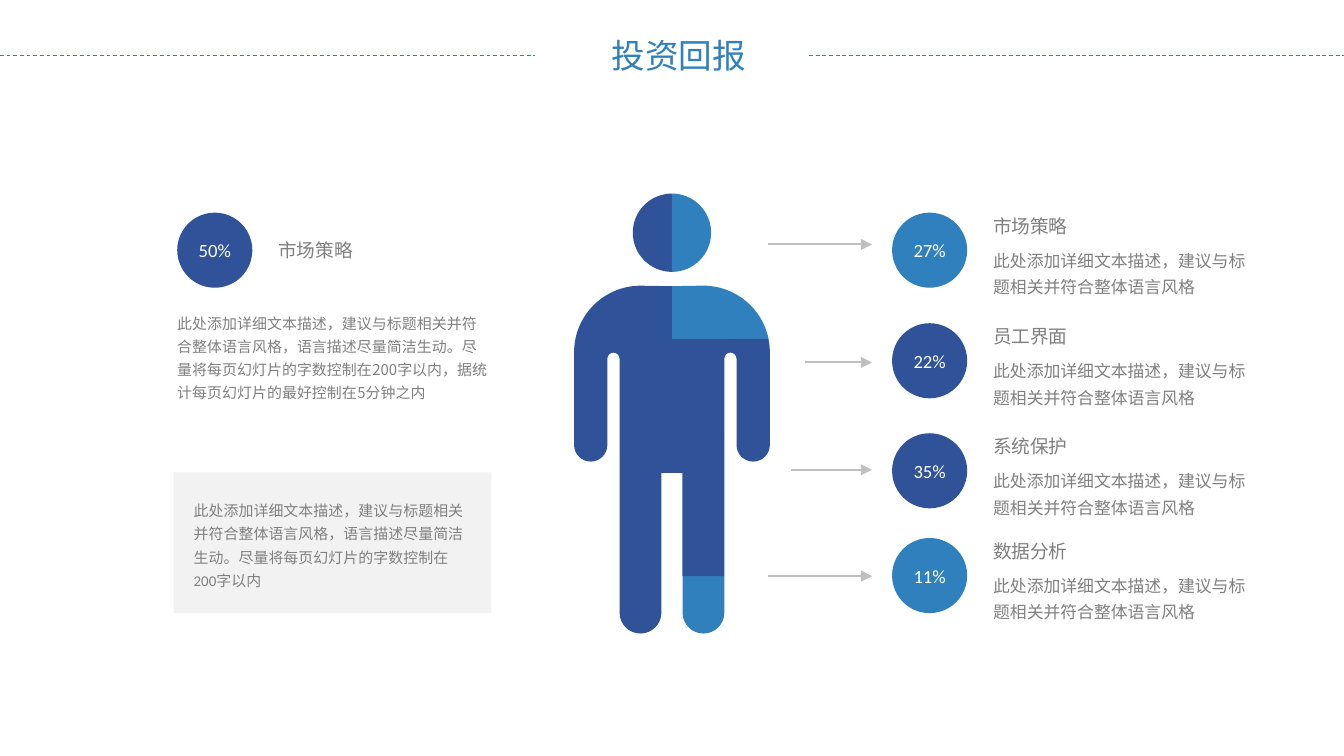
import math
from lxml import etree
from pptx import Presentation
from pptx import util as u
from pptx.dml.color import RGBColor
from pptx.enum import dml, lang, shapes, text
from pptx.oxml.ns import qn

HUES = {"navy": "305299", "blue": "3080BD", "gray": "808080",
        "pale": "F2F2F2", "arrow": "BFBFBF", "white": "FFFFFF"}
LATIN, HAN = "Calibri", "Noto Sans CJK SC"
NOTE = "此处添加详细文本描述，建议与标题相关并符合整体语言风格"
LONG = NOTE + "，语言描述尽量简洁生动。尽量将每页幻灯片的字数控制在200字以内"
DISC = 1.42
ROWS = [
    (4.02, "27%", "市场策略", "blue", 14.52, 4.62),
    (6.11, "22%", "员工界面", "navy", 15.21, 6.85),
    (8.19, "35%", "系统保护", "navy", 14.95, 8.88),
    (10.17, "11%", "数据分析", "blue", 14.52, 10.89),
]


def color(hue):
    return RGBColor.from_string(HUES[hue])


def paint(shape, hue):
    shape.shadow.inherit = False
    shape.fill.solid()
    shape.fill.fore_color.rgb = color(hue)
    shape.line.fill.background()


def write(shape, words, size, font, hue="gray", inset=(0, 0), space=None,
          align=text.PP_ALIGN.LEFT, anchor=text.MSO_ANCHOR.MIDDLE, wrap=True):
    frame = shape.text_frame
    frame.text = words
    frame.word_wrap = wrap
    frame.auto_size = text.MSO_AUTO_SIZE.NONE
    frame.vertical_anchor = anchor
    frame.margin_left = frame.margin_right = u.Cm(inset[0])
    frame.margin_top = frame.margin_bottom = u.Cm(inset[1])
    para = frame.paragraphs[0]
    para.alignment = align
    if space:
        para.line_spacing = space
    run = para.runs[0]
    run.font.size = u.Pt(size)
    run.font.name = font
    run.font.color.rgb = color(hue)
    run.font.language_id = lang.MSO_LANGUAGE_ID.SIMPLIFIED_CHINESE
    etree.SubElement(run.font._element, qn("a:ea"), typeface=HAN)


def label(slide, box, words, **style):
    shape = slide.shapes.add_textbox(*map(u.Cm, box))
    write(shape, words, **style)


def stroke(slide, start, end, hue, width):
    line = slide.shapes.add_connector(
        shapes.MSO_CONNECTOR.STRAIGHT, *map(u.Cm, (*start, *end)))
    line.line.color.rgb = color(hue)
    line.line.width = u.Pt(width)
    etree.SubElement(line._element.spPr, qn("a:effectLst"))
    return line


def arrow(slide, tip, tail):
    line = stroke(slide, tip, tail, "arrow", 1)
    etree.SubElement(line.line._get_or_add_ln(), qn("a:headEnd"), type="triangle")


def badge(slide, x, y, words, hue):
    disc = slide.shapes.add_shape(
        shapes.MSO_SHAPE.ROUNDED_RECTANGLE, *map(u.Cm, (x, y, DISC, DISC)))
    disc.adjustments[0] = 0.5
    paint(disc, hue)
    write(disc, words, 10, LATIN, "white", align=text.PP_ALIGN.CENTER)


def header(slide, x, y, wide):
    for left, right in ((x, x + 10.11), (x + wide - 10.11, x + wide)):
        rule = stroke(slide, (left, y), (right, y), "blue", 0.5)
        rule.line.dash_style = dml.MSO_LINE.DASH
    title = slide.shapes.title
    title.left, title.top = u.Cm(x + 11.35), u.Cm(y - 0.48)
    title.width, title.height = u.Cm(2.95), u.Cm(0.97)
    write(title, "投资回报", 18, HAN, "blue", (0.18, 0.1),
          align=text.PP_ALIGN.CENTER, wrap=False)


def arc(cx, cy, r, start, end):
    count = math.ceil(abs(end - start) / 90)
    turn = math.radians((end - start) / count)
    pull = 4 / 3 * math.tan(turn / 4)
    first = math.radians(start)
    bends = [(cx + r * math.cos(first), cy + r * math.sin(first))]
    for i in range(count):
        a, b = first + i * turn, first + (i + 1) * turn
        bends.append((
            cx + r * (math.cos(a) - pull * math.sin(a)),
            cy + r * (math.sin(a) + pull * math.cos(a)),
            cx + r * (math.cos(b) + pull * math.sin(b)),
            cy + r * (math.sin(b) - pull * math.cos(b)),
            cx + r * math.cos(b), cy + r * math.sin(b)))
    return bends


def part(slide, mid, top, points, hue, side=1):
    spots, curves = [], []
    for item in points:
        if len(item) == 6:
            curves.append(len(spots) - 1)
        spots += [(u.Cm(mid + side * x), u.Cm(top + y))
                  for x, y in zip(item[::2], item[1::2])]
    pen = slide.shapes.build_freeform(*spots[0])
    pen.add_line_segments(spots[1:], close=True)
    shape = pen.convert_to_shape()
    steps = list(shape._element.iter(qn("a:lnTo")))
    for at in curves:
        curve = etree.Element(qn("a:cubicBezTo"))
        steps[at].addprevious(curve)
        for step in steps[at:at + 3]:
            curve.append(step[0])
            step.getparent().remove(step)
    paint(shape, hue)


def person(slide, x, y, wide):
    mid = x + wide / 2
    neck, chest, waist, hip, knee = 1.75, 2.75, 4.62, 5.28, 7.23
    arm, gap, leg, slit = 1.85, 1.22, 0.99, 0.2
    bend = -math.degrees(math.asin(0.2))
    head = arc(0, 0.74, 0.74, -90, 90)
    sleeve = arc(0.59, 3, 1.26, -90, 0)
    upper = arc(0.59, 3, 1.26, -90, bend)
    lower = arc(0.59, 3, 1.26, bend, 0)
    hand = arc((arm + gap) / 2, 4.75, (arm - gap) / 2, 0, 180)
    pit = arc((gap + leg) / 2, 3.12, (gap - leg) / 2, 0, -180)
    foot = arc((leg + slit) / 2, 7.92, (leg - slit) / 2, 0, 180)

    body = [(0, neck)] + sleeve + hand + pit + foot + [(slit, hip), (0, hip)]
    torso = [(0, chest)] + lower + [(arm, waist), (gap, waist)]
    torso += pit + [(leg, waist), (0, waist)]
    thigh = [(0, waist), (leg, waist), (leg, knee), (slit, knee), (slit, hip), (0, hip)]
    for points, hue, side in (
        (body, "navy", -1),
        (head, "navy", -1),
        ([(leg, knee)] + foot + [(slit, knee)], "blue", 1),
        ([(0, neck)] + upper + [(0, chest)], "blue", 1),
        (head, "blue", 1),
        (torso, "navy", 1),
        (thigh, "navy", 1),
        ([(arm, waist)] + hand + [(gap, waist)], "navy", 1),
    ):
        part(slide, mid, y, points, hue, side)


def row(slide, x, y, share, name, hue):
    label(slide, (x + 1.91, y + 0.03, 4.04, 0.43), name, size=10, font=LATIN)
    label(slide, (x + 1.91, y + 0.6, 5.03, 1.22), NOTE, size=9, font=HAN,
          space=1.3, anchor=text.MSO_ANCHOR.TOP)
    badge(slide, x, y, share, hue)


def intro(slide, x, y, wide):
    badge(slide, x, y, "50%", "navy")
    label(slide, (x + 1.91, y + 0.5, 4.04, 0.43), "市场策略", size=10, font=LATIN)
    label(slide, (x, y + 1.82, wide, 2.79), LONG + "，据统计每页幻灯片的最好控制在5分钟之内",
          size=8, font=HAN, space=1.3, anchor=text.MSO_ANCHOR.TOP)


def panel(slide, x, y, wide, high):
    card = slide.shapes.add_shape(
        shapes.MSO_SHAPE.RECTANGLE, *map(u.Cm, (x, y, wide, high)))
    paint(card, "pale")
    write(card, LONG, 8, LATIN, inset=(0.38, 0.1), space=1.3)


def main():
    deck = Presentation()
    deck.slide_width, deck.slide_height = u.Cm(25.4), u.Cm(14.29)
    slide = deck.slides.add_slide(deck.slide_layouts[5])
    header(slide, 0, 1.04, 25.4)
    person(slide, 10.85, 3.66, 3.7)
    for top, share, name, hue, tail, level in ROWS:
        row(slide, 16.86, top, share, name, hue)
        arrow(slide, (16.48, level), (tail, level))
    intro(slide, 3.35, 4.02, 5.94)
    panel(slide, 3.28, 8.93, 6.01, 2.66)
    deck.save("out.pptx")


if __name__ == "__main__":
    main()
